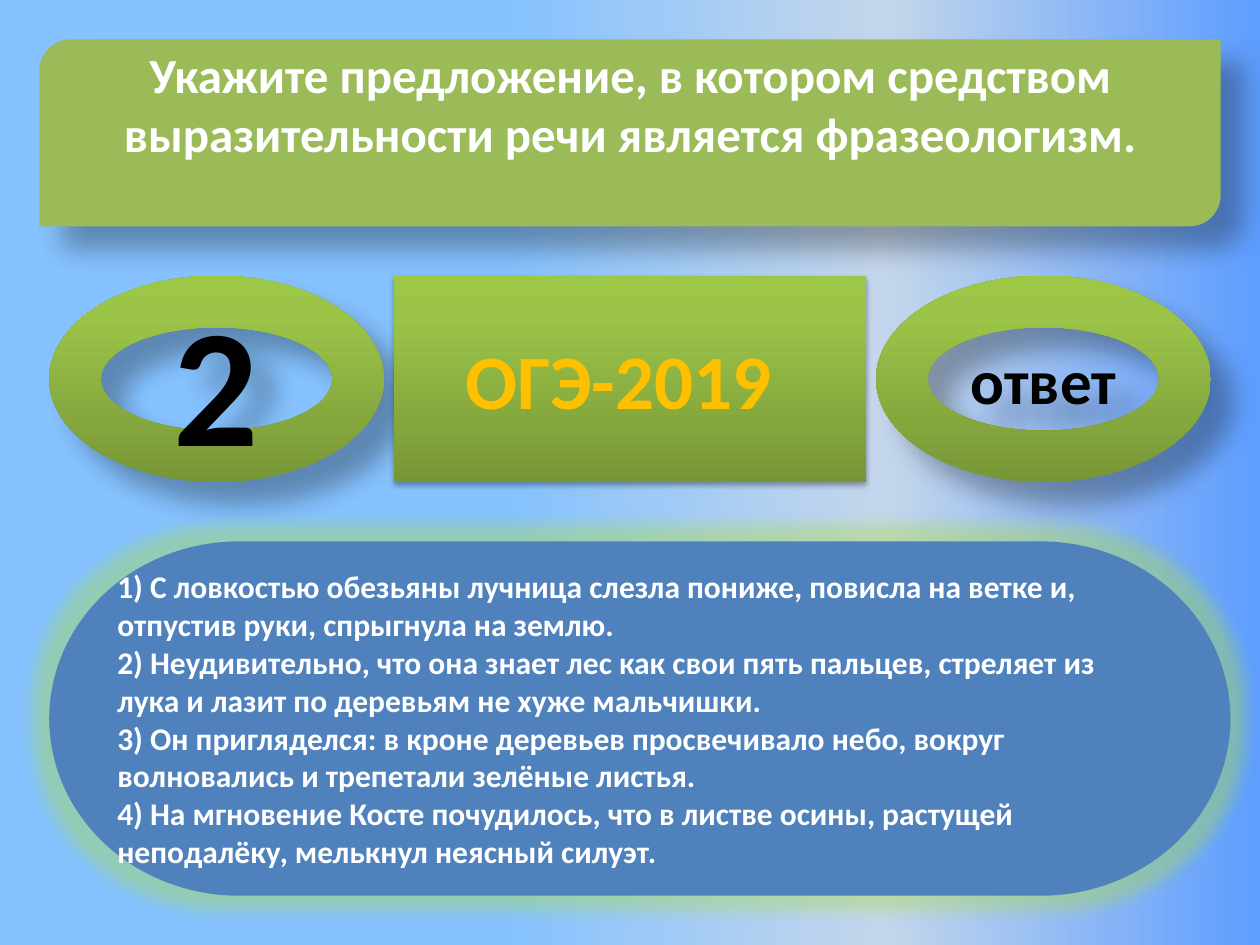
from lxml.etree import SubElement
from pptx import Presentation
from pptx.dml.color import RGBColor
from pptx.enum.shapes import MSO_SHAPE as Preset
from pptx.enum.text import MSO_ANCHOR as Anchor, PP_ALIGN as Align
from pptx.oxml.ns import qn
from pptx.util import Inches, Pt

QUESTION = "Укажите предложение, в котором средством выразительности речи является фразеологизм."
ANSWERS = [
    "1) С ловкостью обезьяны лучница слезла пониже, повисла на ветке и, отпустив руки, спрыгнула на землю.",
    "2) Неудивительно, что она знает лес как свои пять пальцев, стреляет из лука и лазит по деревьям не хуже мальчишки.",
    "3) Он пригляделся: в кроне деревьев просвечивало небо, вокруг волновались и трепетали зелёные листья.",
    "4) На мгновение Косте почудилось, что в листве осины, растущей неподалёку, мелькнул неясный силуэт.",
]
SKY = [(0, "85C2FF"), (40, "85C2FF"), (70, "C4D6EB"), (100, "5E9EFF")]
LEAF = [(0, "779737"), (80, "9BC348"), (100, "9DC746")]
DEEP_SHADOW = dict(alpha=30, blur=15, distance=18, angle=45)
SOFT_SHADOW = dict(alpha=35, blur=3.15, distance=1.8, angle=90)


def color(code):
    """Turn a hex string into a colour."""
    return RGBColor.from_string(code)


def write(frame, lines, size, ink="FFFFFF", align=Align.LEFT, font="Calibri", bold=True):
    """Fill a text frame with one paragraph per line."""
    for index, line in enumerate(lines):
        paragraph = frame.add_paragraph() if index else frame.paragraphs[0]
        paragraph.alignment = align
        run = paragraph.add_run()
        run.text = line
        run.font.name, run.font.size, run.font.bold = font, Pt(size), bold
        run.font.color.rgb = color(ink)


def paint_gradient(fill, owner, stops, angle):
    """Give a fill a linear gradient with any number of stops."""
    fill.gradient()
    fill.gradient_angle = angle
    stop_list = next(owner.iter(qn("a:gsLst")))
    for stop in list(stop_list):
        stop_list.remove(stop)
    for position, code in stops:
        stop = SubElement(stop_list, qn("a:gs"), pos=str(position * 1000))
        SubElement(stop, qn("a:srgbClr"), val=code)


class Board:
    """Slide divided into a grid of columns and rows, with the quiz style."""

    columns, rows = 128, 96

    def __init__(self):
        """Open a presentation with one blank slide."""
        self.presentation = Presentation()
        self.presentation.slide_width = Inches(10)
        self.presentation.slide_height = Inches(7.5)
        self.slide = self.presentation.slides.add_slide(self.presentation.slide_layouts[6])

    def background(self, stops):
        """Paint the slide from left to right."""
        paint_gradient(self.slide.background.fill, self.slide.element, stops, 0)

    def panel(self, preset, box, fill):
        """Add an unlined shape in a grid box, with a plain or gradient fill."""
        across = self.presentation.slide_width / self.columns
        down = self.presentation.slide_height / self.rows
        left, top, width, height = box
        shape = self.slide.shapes.add_shape(
            preset, int(left * across), int(top * down), int(width * across), int(height * down))
        shape.shadow.inherit = False
        shape.line.fill.background()
        if isinstance(fill, str):
            shape.fill.solid()
            shape.fill.fore_color.rgb = color(fill)
        else:
            paint_gradient(shape.fill, shape.element, fill, 90)
        shape.text_frame.word_wrap = True
        shape.text_frame.vertical_anchor = Anchor.MIDDLE
        return shape

    def effect(self, shape, kind, code, alpha, **settings):
        """Add a coloured effect to a shape."""
        effects = next(shape.element.iter(qn("a:effectLst")))
        effect = SubElement(effects, qn(kind), **{key: str(value) for key, value in settings.items()})
        tint = SubElement(effect, qn("a:srgbClr"), val=code)
        SubElement(tint, qn("a:alpha"), val=str(alpha * 1000))

    def shadow(self, shape, alpha, blur, distance, angle):
        """Cast a black shadow."""
        self.effect(shape, "a:outerShdw", "000000", alpha, blurRad=Pt(blur), dist=Pt(distance),
                    dir=angle * 60000, algn="tl", rotWithShape=0)

    def question(self, text):
        """Add the question banner."""
        shape = self.panel(Preset.ROUND_2_DIAG_RECTANGLE, (4, 4, 120, 19), "9BBB59")
        self.shadow(shape, **DEEP_SHADOW)
        shape.text_frame.margin_bottom = Inches(0.52)
        write(shape.text_frame, [text], 28, align=Align.CENTER)

    def badge(self, preset, left, width, text, shadow, **style):
        """Add a green badge in the middle row."""
        shape = self.panel(preset, (left, 28, width, 21), LEAF)
        self.shadow(shape, **shadow)
        write(shape.text_frame, [text], **style)

    def answers(self, lines):
        """Add the glowing panel of answers."""
        shape = self.panel(Preset.FLOWCHART_TERMINATOR, (5, 55, 120, 36), "4F81BD")
        self.effect(shape, "a:glow", "A8DD46", 40, rad=Pt(18))
        write(shape.text_frame, lines, 18)


def main():
    """Build and save the quiz slide."""
    board = Board()
    board.background(SKY)
    board.question(QUESTION)
    ring = dict(ink="000000", align=Align.CENTER)
    badges = [
        (Preset.DONUT, 34, "2", DEEP_SHADOW, dict(size=96, **ring)),
        (Preset.FLOWCHART_PREDEFINED_PROCESS, 48, "ОГЭ-2019", SOFT_SHADOW, dict(size=44, ink="FFC000")),
        (Preset.DONUT, 34, "ответ", DEEP_SHADOW, dict(size=36, **ring)),
    ]
    left = 5
    for preset, width, text, shadow, style in badges:
        board.badge(preset, left, width, text, shadow, **style)
        left += width + 1
    board.answers(ANSWERS)
    board.presentation.save("out.pptx")


if __name__ == "__main__":
    main()
